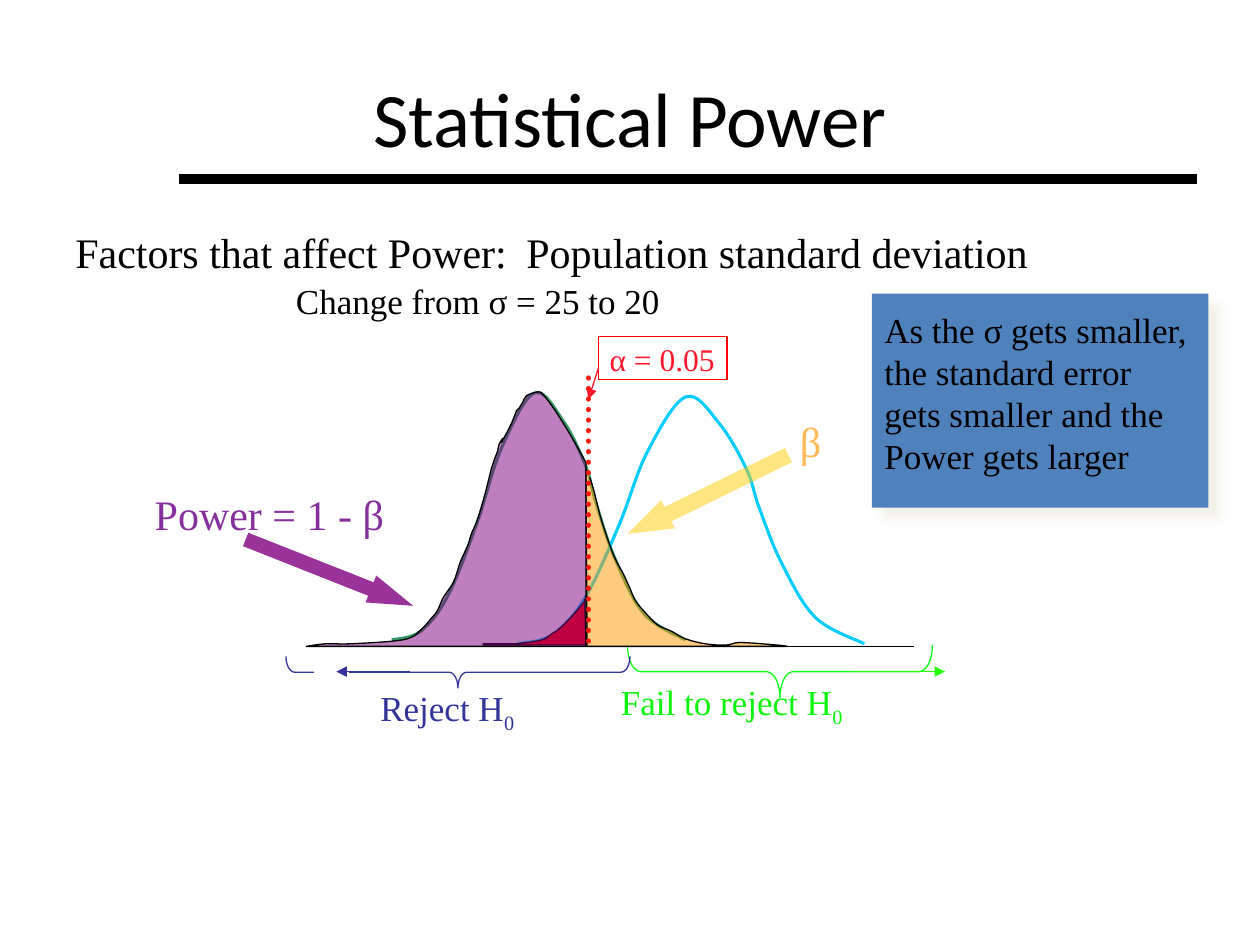
from lxml.etree import SubElement as Sub
from pptx import Presentation as Deck
from pptx.dml.color import RGBColor as Rgb
from pptx.enum.dml import MSO_LINE as Dash
from pptx.enum.shapes import MSO_CONNECTOR as Link, MSO_SHAPE as Kind
from pptx.enum.text import MSO_ANCHOR as Anchor, MSO_AUTO_SIZE as Auto, PP_ALIGN as Align
from pptx.oxml.ns import qn
from pptx.util import Pt

PX = 9144
WIDE, HIGH = 1000, 750


def emu(*nums):
    return [round(n * PX) for n in nums]


def tint(code):
    return Rgb.from_string(code)


def apply(item, form):
    for key, val in form.items():
        setattr(item, key, val)


class Page:
    font = "Times New Roman"

    def __init__(self, deck):
        self.slide = deck.slides.add_slide(deck.slide_layouts[5])
        self.shapes = self.slide.shapes

    def group(self):
        self.shapes = self.slide.shapes.add_group_shape().shapes

    def leave(self):
        self.shapes = self.slide.shapes

    def fill(self, item, code, alpha=100):
        if not code:
            item.fill.background()
            return
        item.fill.solid()
        item.fill.fore_color.rgb = tint(code)
        if alpha < 100:
            color = item._element.spPr.find(qn("a:solidFill"))[0]
            Sub(color, qn("a:alpha")).set("val", str(alpha * 1000))

    def edge(self, item, code, size=0.75):
        if not code:
            item.line.fill.background()
            return
        item.line.color.rgb = tint(code)
        item.line.width = Pt(size)

    def title(self, text, box, size):
        item = self.shapes.title
        apply(item, dict(zip(("left", "top", "width", "height"), emu(*box))))
        item.text_frame.text = text
        item.text_frame.vertical_anchor = Anchor.MIDDLE
        par = item.text_frame.paragraphs[0]
        par.alignment = Align.CENTER
        apply(par.runs[0].font, {"name": "Calibri", "size": Pt(size)})
        par.runs[0].font.color.rgb = tint("000000")

    def text(self, lines, box, size, code="000000", sub="", wrap=True, space=None):
        frame = self.shapes.add_textbox(*emu(*box)).text_frame
        apply(frame, {"word_wrap": wrap, "auto_size": Auto.SHAPE_TO_FIT_TEXT})
        for n, line in enumerate(lines):
            par = frame.add_paragraph() if n else frame.paragraphs[0]
            par.line_spacing = space
            for part in filter(None, (line, sub)):
                run = par.add_run()
                apply(run, {"text": part})
                apply(run.font, {"name": self.font, "size": Pt(size)})
                run.font.color.rgb = tint(code)
                if part == sub:
                    run._r.get_or_add_rPr().set("baseline", "-25000")

    def shape(self, kind, box, fill=None, line=None, alpha=100, turn=0, adj=(), flip=False):
        item = self.shapes.add_shape(kind, *emu(*box))
        apply(item, {"rotation": turn})
        item.shadow.inherit = False
        for n, val in enumerate(adj):
            item.adjustments[n] = val
        if flip:
            item._element.spPr.find(qn("a:xfrm")).set("flipH", "1")
        self.fill(item, fill, alpha)
        self.edge(item, line)
        return item

    def shade(self, item, code, alpha, blur, dist, angle):
        glow = Sub(item._element.spPr.find(qn("a:effectLst")), qn("a:outerShdw"))
        for key, val in {"blurRad": Pt(blur), "dist": Pt(dist), "dir": angle * 60000, "rotWithShape": 0}.items():
            glow.set(key, str(int(val)))
        color = Sub(glow, qn("a:srgbClr"), val=code)
        Sub(color, qn("a:alpha"), val=str(alpha * 1000))

    def line(self, ends, code, size=0.75, dash=None, arrow=False):
        item = self.shapes.add_connector(Link.STRAIGHT, *emu(*ends))
        self.edge(item, code, size)
        pen = item.line._get_or_add_ln()
        if dash:
            item.line.dash_style = dash
            pen.set("cap", "rnd")
        if arrow:
            Sub(pen, qn("a:tailEnd"), type="triangle")
        Sub(item._element.spPr, qn("a:effectLst"))

    def bend(self, item, knots):
        legs = list(item._element.iter(qn("a:lnTo")))[:len(knots) - 1]
        last = legs[-1][0]
        dx, dy = (int(last.get(key)) - end for key, end in zip("xy", emu(*knots[-1])))
        ends = [knots[0], *knots, knots[-1]]
        for leg, a, b, c, d in zip(legs, ends, ends[1:], ends[2:], ends[3:]):
            leg.tag = qn("a:cubicBezTo")
            first = [q + (r - p) / 6 for p, q, r in zip(a, b, c)]
            second = [r - (s - q) / 6 for q, r, s in zip(b, c, d)]
            for n, dot in enumerate((first, second)):
                x, y = emu(*dot)
                pin = Sub(leg, qn("a:pt"), x=str(x + dx), y=str(y + dy))
                leg.insert(n, pin)

    def curve(self, knots, line, size=0.75, fill=None, alpha=100, base=(), close=False):
        dots = [emu(*dot) for dot in [*knots, *base]]
        form = self.shapes.build_freeform(*dots[0], scale=1.0)
        form.add_line_segments(dots[1:], close=close)
        item = form.convert_to_shape()
        self.bend(item, knots)
        item.shadow.inherit = False
        self.fill(item, fill, alpha)
        self.edge(item, line, size)


BELL = [(311, 508), (334, 501), (356, 472), (379, 414), (398, 356), (424, 312),
        (447, 334), (465, 370), (473, 399), (488, 443), (511, 487), (544, 508)]
ALPHA = [(383, 511), (400, 511), (410, 511), (430, 508), (438, 503),
         (444, 499), (455, 488), (465, 476), (464, 476)]
BETA = [(468, 379), (471, 388), (474, 400), (476, 408), (480, 421), (486, 438),
        (490, 447), (495, 456), (500, 467), (504, 476), (511, 485), (522, 496),
        (533, 501), (544, 507), (560, 511), (576, 512), (588, 510), (617, 512), (625, 513)]
POWER = [(465, 367), (455, 349), (444, 331), (438, 322), (431, 313), (427, 311),
         (418, 314), (415, 319), (412, 324), (411, 325), (410, 326), (406, 336), (403, 342),
         (398, 351), (399, 348), (396, 353), (395, 358), (393, 363), (390, 372), (388, 380),
         (385, 392), (381, 406), (378, 415), (374, 424), (372, 431), (369, 438),
         (365, 447), (360, 462), (352, 474), (347, 485), (342, 491), (336, 498),
         (326, 506), (310, 509), (277, 511), (258, 511), (243, 513)]


def main():
    deck = Deck()
    apply(deck, dict(zip(("slide_width", "slide_height"), emu(WIDE, HIGH))))
    page = Page(deck)
    page.title("Statistical Power", (50, 30, 900, 125), 44)
    page.line((142, 142, 950, 142), "000000", 6)

    page.curve(BELL, "339966", 1.75)
    page.line((250, 513, 725, 513), "000000")
    page.curve([(411 + (x - 311) * 275 / 233, y + 3) for x, y in BELL], "00CCFF", 1.75)

    page.group()
    page.shape(Kind.LEFT_BRACE, (598, 412, 42, 242), line="0EFF15", turn=90, adj=(0.25, 0.5), flip=True)
    page.line((676, 533, 750, 533), "27FF09", arrow=True)
    page.group()
    page.shape(Kind.RECTANGLE, (475, 267, 102, 34), line="FF0000")
    page.text(["α = 0.05"], (474, 265, 107, 40), 18, "FF182D", wrap=False)
    page.leave()
    page.line((475, 292, 467, 317), "FF182D", arrow=True)
    page.text(["Fail to reject H"], (483, 548, 275, 27), 20, "0CF50C", sub="0", space=0.5)
    page.text(["Reject H"], (292, 540, 142, 43), 20, "333399", sub="0")
    page.group()
    page.shape(Kind.LEFT_BRACE, (351, 397, 25, 273), line="333399", turn=270, adj=(0.28, 0.5))
    page.shape(Kind.RECTANGLE, (249, 508, 28, 33), fill="FFFFFF")
    page.line((325, 533, 267, 533), "333399", arrow=True)
    page.leave()

    page.curve(ALPHA, "000000", fill="FF0000", base=[(465, 512), (383, 512)])
    page.curve(BETA, "000000", fill="FF9900", alpha=50, base=[(466, 513), (465, 372)])
    page.group()
    page.shape(Kind.LEFT_ARROW, (491, 380, 142, 25), "FFCC00", alpha=50, turn=333.9, adj=(0.5, 1.42))
    page.text(["β"], (625, 325, 58, 50), 24, "FFB955")
    page.leave()
    page.curve(POWER, "000000", fill="800080", alpha=50, base=[(465, 513)], close=True)
    page.group()
    page.text(["Power = 1 - β"], (113, 383, 206, 51), 24, "85309D", wrap=False)
    page.shape(Kind.RIGHT_ARROW, (190, 443, 143, 23), "800080", alpha=80, turn=21.6, adj=(0.5, 1.57))
    page.leave()

    page.text(["Factors that affect Power:"], (50, 175, 364, 50), 24)
    page.group()
    card = page.shape(Kind.RECTANGLE, (692, 233, 267, 170), "4F81BD")
    page.shade(card, "EEECE1", 75, 5, 8.5, 45)
    page.text(["As the σ gets smaller, the standard error", "gets smaller and the Power gets larger"],
              (692, 240, 275, 143), 20)
    page.leave()
    page.line((467, 300, 467, 511), "FF180F", 3, Dash.ROUND_DOT)
    page.text(["Population standard deviation"], (408, 175, 467, 50), 24)
    page.text(["Change from σ = 25 to 20"], (225, 217, 425, 43), 20)
    deck.save("out.pptx")


if __name__ == "__main__":
    main()
